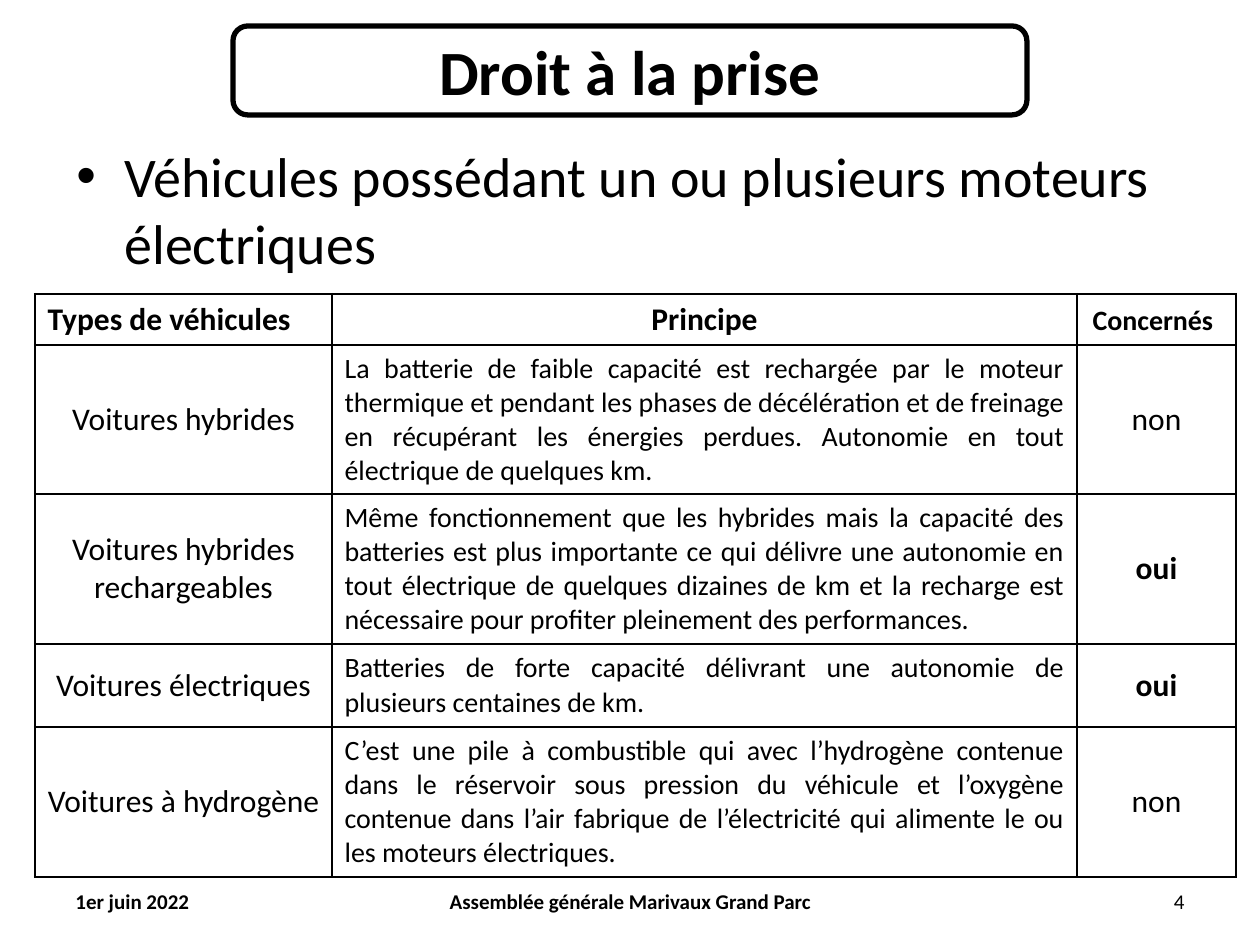
from lxml import etree
from pptx import Presentation
from pptx.dml.color import RGBColor
from pptx.enum.shapes import MSO_SHAPE
from pptx.enum.text import MSO_ANCHOR, PP_ALIGN
from pptx.oxml.ns import qn
from pptx.util import Emu, Pt

LEFT, CENTER, RIGHT, JUSTIFY = (
    PP_ALIGN.LEFT, PP_ALIGN.CENTER, PP_ALIGN.RIGHT, PP_ALIGN.JUSTIFY)
TOP, MIDDLE = MSO_ANCHOR.TOP, MSO_ANCHOR.MIDDLE
ROUNDED = MSO_SHAPE.ROUNDED_RECTANGLE

PX_PER_INCH = 126
FONT = "Calibri"
BLACK = "000000"

COLUMN_WIDTHS = [297, 745, 159]
ROW_HEIGHTS = [51, 149, 150, 83, 150]
VEHICLES = [
    ("Voitures hybrides",
     "La batterie de faible capacité est rechargée par le moteur thermique et "
     "pendant les phases de décélération et de freinage en récupérant les "
     "énergies perdues. Autonomie en tout électrique de quelques km.",
     "non"),
    ("Voitures hybrides rechargeables",
     "Même fonctionnement que les hybrides mais la capacité des batteries est "
     "plus importante ce qui délivre une autonomie en tout électrique de "
     "quelques dizaines de km et la recharge est nécessaire pour profiter "
     "pleinement des performances.",
     "oui"),
    ("Voitures électriques",
     "Batteries de forte capacité délivrant une autonomie de plusieurs "
     "centaines de km.",
     "oui"),
    ("Voitures à hydrogène",
     "C’est une pile à combustible qui avec l’hydrogène contenue dans le "
     "réservoir sous pression du véhicule et l’oxygène contenue dans l’air "
     "fabrique de l’électricité qui alimente le ou les moteurs électriques.",
     "non"),
]


def px(length):
    return Emu(round(length * 914400 / PX_PER_INCH))


def color(hex_value):
    return RGBColor.from_string(hex_value)


def add_span(para, text, size, bold=False):
    span = para.add_run()
    span.text = text
    for name, value in {"name": FONT, "size": Pt(size), "bold": bold}.items():
        setattr(span.font, name, value)
    span.font.color.rgb = color(BLACK)


def write(frame, text, size, bold=False, align=LEFT, anchor=MIDDLE):
    for name, value in {"word_wrap": True, "vertical_anchor": anchor}.items():
        setattr(frame, name, value)
    para = frame.paragraphs[0]
    para.alignment = align
    add_span(para, text, size, bold)
    return para


def add_text(page, bounds, text, size, **layout):
    box = page.shapes.add_textbox(*map(px, bounds))
    return write(box.text_frame, text, size, **layout)


def add_bullet(para, indent):
    props = para._p.get_or_add_pPr()
    props.set("marL", str(px(indent)))
    props.set("indent", str(-px(indent)))
    etree.SubElement(props, qn("a:buFont"), typeface="Arial")
    etree.SubElement(props, qn("a:buChar"), char="•")


def add_title(page, bounds, text):
    box = page.shapes.add_shape(ROUNDED, *map(px, bounds))
    box.shadow.inherit = False
    box.fill.background()
    box.line.color.rgb = color(BLACK)
    box.line.width = Pt(3)
    write(box.text_frame, text, 36, bold=True, align=CENTER)


def format_cell(cell):
    props = cell._tc.get_or_add_tcPr()
    for side in ("lnL", "lnR", "lnT", "lnB"):
        border = etree.SubElement(props, qn(f"a:{side}"), w=str(Pt(1.5)))
        fill = etree.SubElement(border, qn("a:solidFill"))
        etree.SubElement(fill, qn("a:srgbClr"), val=BLACK)
    cell.fill.background()
    cell.vertical_anchor = MIDDLE


def add_vehicle_table(page, left, top):
    frame = page.shapes.add_table(
        len(ROW_HEIGHTS), len(COLUMN_WIDTHS), px(left), px(top),
        px(sum(COLUMN_WIDTHS)), px(sum(ROW_HEIGHTS)))
    table = frame.table
    table.first_row = table.horz_banding = False
    for column, width in zip(table.columns, COLUMN_WIDTHS):
        column.width = px(width)
    for row, height in zip(table.rows, ROW_HEIGHTS):
        row.height = px(height)
    for cell in table.iter_cells():
        format_cell(cell)

    def fill_cell(row, column, text, size, bold, align):
        para = table.cell(row, column).text_frame.paragraphs[0]
        para.alignment = align
        add_span(para, text, size, bold)
        return para

    # Header row
    fill_cell(0, 0, "Types de véhicules", 18, True, LEFT)
    fill_cell(0, 1, "Principe", 18, True, CENTER)
    concerned = fill_cell(0, 2, "Concernés", 16, True, CENTER)
    add_span(concerned, " ", 18, True)

    # One row per vehicle type
    for row, (vehicle, principle, answer) in enumerate(VEHICLES, start=1):
        fill_cell(row, 0, vehicle, 18, False, CENTER)
        fill_cell(row, 1, principle, 16, False, JUSTIFY)
        fill_cell(row, 2, answer, 18, answer == "oui", CENTER)


def main():
    deck = Presentation()
    deck.slide_width, deck.slide_height = px(1260), px(945)
    page = deck.slides.add_slide(deck.slide_layouts[6])

    # Title and introduction
    add_title(page, (233, 26, 794, 89), "Droit à la prise")
    intro = add_text(
        page, (64, 135, 1134, 152),
        "Véhicules possédant un ou plusieurs moteurs électriques", 32,
        anchor=TOP)
    add_bullet(intro, 48)

    # Vehicle types
    add_vehicle_table(page, 35, 294)

    # Footer
    add_text(page, (63, 876, 294, 50), "1er juin 2022", 12, bold=True)
    add_text(page, (431, 876, 399, 50),
             "Assemblée générale Marivaux Grand Parc", 12,
             bold=True, align=CENTER)
    add_text(page, (903, 876, 294, 50), "4", 12, align=RIGHT)

    deck.save("out.pptx")


if __name__ == "__main__":
    main()
